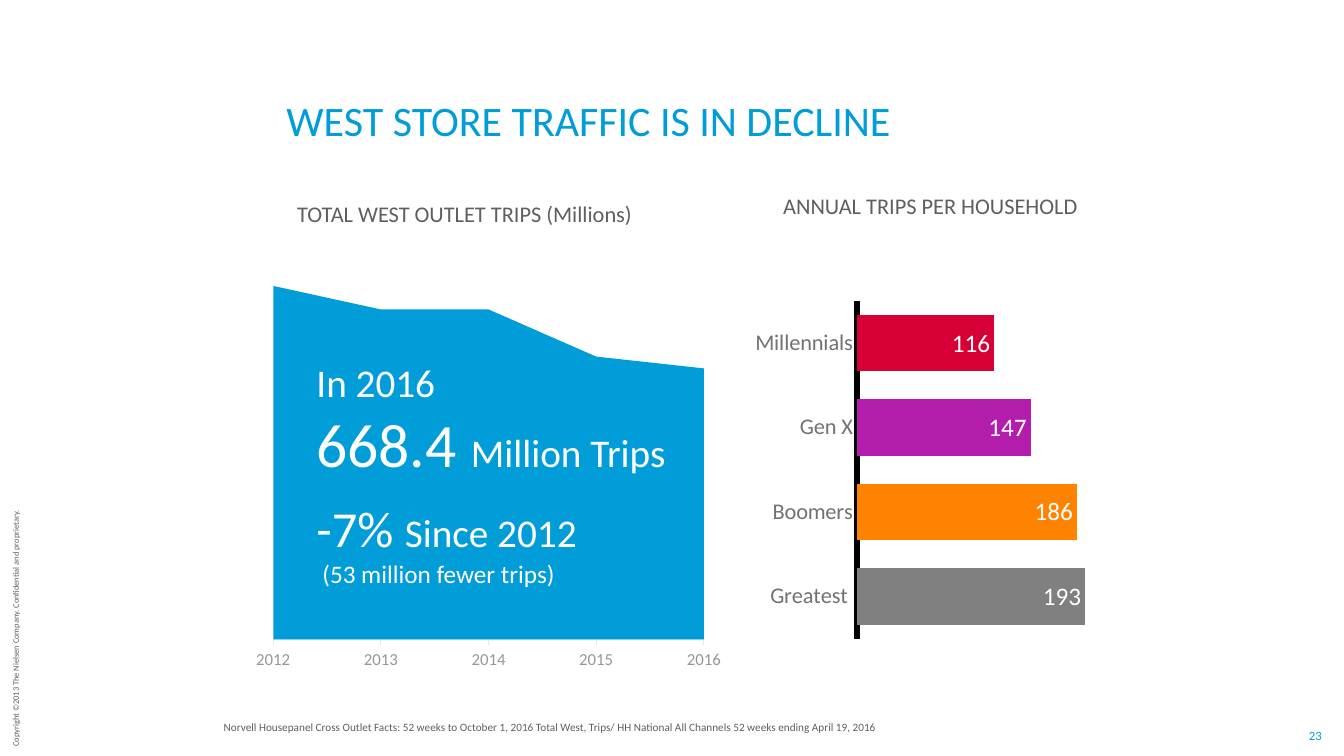
from pptx import Presentation
from pptx import util as u
from pptx.chart.data import CategoryChartData
from pptx.dml.color import RGBColor
from pptx.enum import chart as ch, text as t
from pptx.oxml import parse_xml
from pptx.oxml.ns import nsdecls, qn

FONT = "Calibri"
BLUE = RGBColor(0x00, 0x9D, 0xD9)
GREY = RGBColor(0x5F, 0x5F, 0x5F)
YEAR_GREY = RGBColor(0x97, 0x97, 0x97)
LABEL_GREY = RGBColor(0x70, 0x72, 0x76)
PALE = RGBColor(0xE7, 0xE7, 0xE7)
WHITE = RGBColor(0xFF, 0xFF, 0xFF)
BLACK = RGBColor(0x00, 0x00, 0x00)

GENERATIONS = [
    ("Greatest ", 193, RGBColor(0x80, 0x80, 0x80)),
    ("Boomers", 186, RGBColor(0xFF, 0x83, 0x00)),
    ("Gen X", 147, RGBColor(0xB2, 0x1D, 0xAC)),
    ("Millennials", 116, RGBColor(0xD7, 0x00, 0x36)),
]
TRIP_INDEX = {"2012": 100, "2013": 98, "2014": 98, "2015": 94, "2016": 93}


def style_font(font, size, color):
    font.name = FONT
    font.size = u.Pt(size)
    font.color.rgb = color


def write(paragraph, words, size=16, color=GREY, align=t.PP_ALIGN.LEFT,
          before=0, indent=0):
    if indent:
        paragraph._p.get_or_add_pPr().set("marL", str(u.Inches(indent)))
    paragraph.alignment = align
    if before:
        paragraph.space_before = u.Pt(before)
    run = paragraph.add_run()
    run.text = words
    style_font(run.font, size, color)


def add_box(slide, place, wrap=False):
    box = slide.shapes.add_textbox(*map(u.Inches, place))
    box.text_frame.word_wrap = wrap
    return box


def add_title(slide, words):
    title = slide.shapes.title
    title.left, title.top, title.width, title.height = map(
        u.Inches, (2.74, 0.94, 8.93, 0.47))
    frame = title.text_frame
    frame.auto_size = t.MSO_AUTO_SIZE.NONE
    frame.vertical_anchor = t.MSO_ANCHOR.TOP
    frame.margin_top = frame.margin_bottom = 0
    write(frame.paragraphs[0], words, size=30, color=BLUE)


def add_callout(slide):
    frame = add_box(slide, (3.04, 3.51, 3.7, 3.03), wrap=True).text_frame
    lines = [
        ([("In 2016", 28)], {}),
        ([("668.4 ", 44), ("Million Trips", 28)], {}),
        ([("-7% ", 36), ("Since 2012", 28)], {"before": 12.6}),
        ([("(53 million fewer trips)", 18)], {"indent": 0.06}),
    ]
    for number, (pieces, layout) in enumerate(lines):
        line = frame.add_paragraph() if number else frame.paragraphs[0]
        for words, size in pieces:
            write(line, words, size=size, color=WHITE, **layout)


def set_plot_area(chart, **fractions):
    plot_area = chart._chartSpace.chart.plotArea
    for layout in plot_area.findall(qn("c:layout")):
        plot_area.remove(layout)
    sizes = "".join(f'<c:{key} val="{value}"/>' for key, value in fractions.items())
    plot_area.insert(0, parse_xml(
        f'<c:layout {nsdecls("c")}><c:manualLayout><c:layoutTarget val="inner"/>'
        f'<c:xMode val="edge"/><c:yMode val="edge"/>{sizes}'
        '</c:manualLayout></c:layout>'))


def add_chart(slide, kind, place, names, values, size, label_color, line_color,
              line_width, tick, low, high):
    data = CategoryChartData()
    data.categories = names
    data.add_series("Series 1", values)
    chart = slide.shapes.add_chart(kind, *map(u.Inches, place), data).chart
    chart.has_legend = chart.has_title = False
    style_font(chart.font, size, GREY)
    categories, scale = chart.category_axis, chart.value_axis
    categories.has_major_gridlines = scale.has_major_gridlines = False
    categories.major_tick_mark = tick
    categories.minor_tick_mark = ch.XL_TICK_MARK.NONE
    categories.format.line.color.rgb = line_color
    categories.format.line.width = u.Pt(line_width)
    style_font(categories.tick_labels.font, size, label_color)
    scale.visible = False
    scale.minimum_scale, scale.maximum_scale = low, high
    fill = chart.plots[0].series[0].format.fill
    fill.solid()
    fill.fore_color.rgb = BLUE
    return chart


def add_trips_chart(slide):
    chart = add_chart(slide, ch.XL_CHART_TYPE.AREA, (2.47, 2.26, 4.8, 4.44),
                      list(TRIP_INDEX), list(TRIP_INDEX.values()), 12, YEAR_GREY,
                      PALE, 0.75, ch.XL_TICK_MARK.OUTSIDE, 70, 100)
    chart.plots[0].vary_by_categories = False
    for crossing in chart._chartSpace.iter(qn("c:crossBetween")):
        crossing.set("val", "midCat")
    set_plot_area(chart, x=0.05, y=0.13, w=0.89, h=0.79)


def add_household_chart(slide):
    names, values, colors = zip(*GENERATIONS)
    chart = add_chart(slide, ch.XL_CHART_TYPE.BAR_CLUSTERED,
                      (6.79, 2.27, 4.27, 4.47), names, values, 16, LABEL_GREY,
                      BLACK, 4.5, ch.XL_TICK_MARK.NONE, 0, 200)
    bars = chart.plots[0]
    bars.gap_width = 50
    bars.vary_by_categories = False
    for number, color in enumerate(colors):
        fill = bars.series[0].points[number].format.fill
        fill.solid()
        fill.fore_color.rgb = color
    labels = bars.series[0].data_labels
    labels.show_value = True
    labels.position = ch.XL_LABEL_POSITION.INSIDE_END
    labels.number_format, labels.number_format_is_linked = "0", False
    style_font(labels.font, 18, WHITE)
    set_plot_area(chart, x=0.4, y=0.16, w=0.55, h=0.75)


def main():
    deck = Presentation()
    deck.slide_width, deck.slide_height = u.Inches(13.33), u.Inches(7.5)
    slide = deck.slides.add_slide(deck.slide_layouts[5])

    rights = add_box(slide, (-1.14, 6.11, 2.59, 0.2))
    rights.rotation = 270
    write(rights.text_frame.paragraphs[0],
          "Copyright ©2013 The Nielsen Company. Confidential and proprietary.", size=6)

    page = add_box(slide, (12.97, 7.22, 0.15, 0.15)).text_frame
    page.margin_left = page.margin_right = page.margin_top = page.margin_bottom = 0
    page.vertical_anchor = t.MSO_ANCHOR.MIDDLE
    write(page.paragraphs[0], "23", size=9, color=BLUE, align=t.PP_ALIGN.CENTER)

    add_trips_chart(slide)
    add_title(slide, "WEST STORE TRAFFIC IS IN DECLINE")
    add_household_chart(slide)

    for place, heading in [
        ((2.85, 1.94, 3.56, 0.37), "TOTAL WEST OUTLET TRIPS (Millions)"),
        ((7.67, 1.86, 3.16, 0.37), "ANNUAL TRIPS PER HOUSEHOLD"),
    ]:
        write(add_box(slide, place).text_frame.paragraphs[0], heading)

    reference = add_box(slide, (2.12, 7.1, 8.93, 0.26), wrap=True)
    write(reference.text_frame.paragraphs[0],
          "Norvell Housepanel Cross Outlet Facts: 52 weeks to October 1, 2016 Total West, "
          "Trips/ HH National All Channels 52 weeks ending April 19, 2016", size=8)
    add_callout(slide)
    deck.save("out.pptx")


if __name__ == "__main__":
    main()
